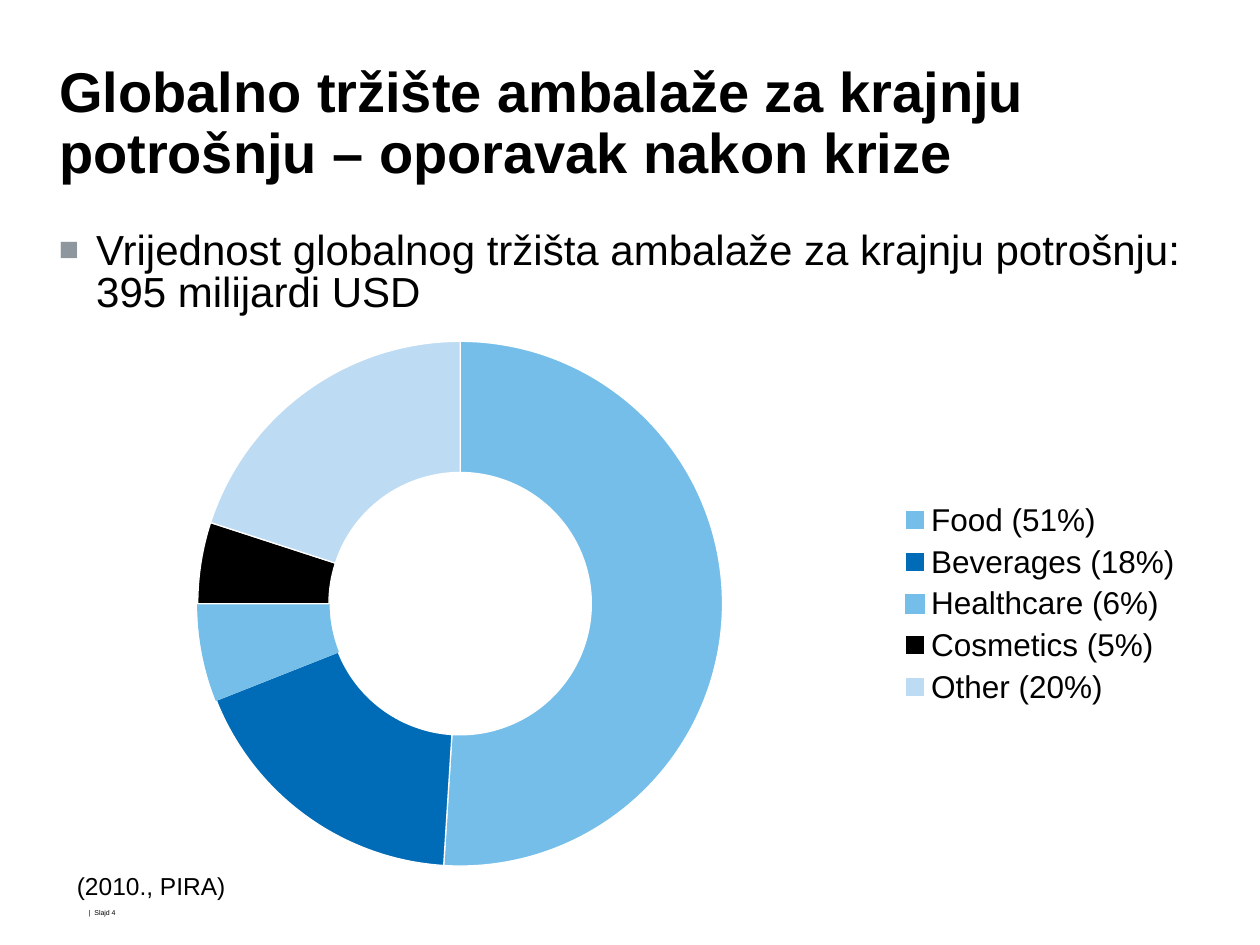
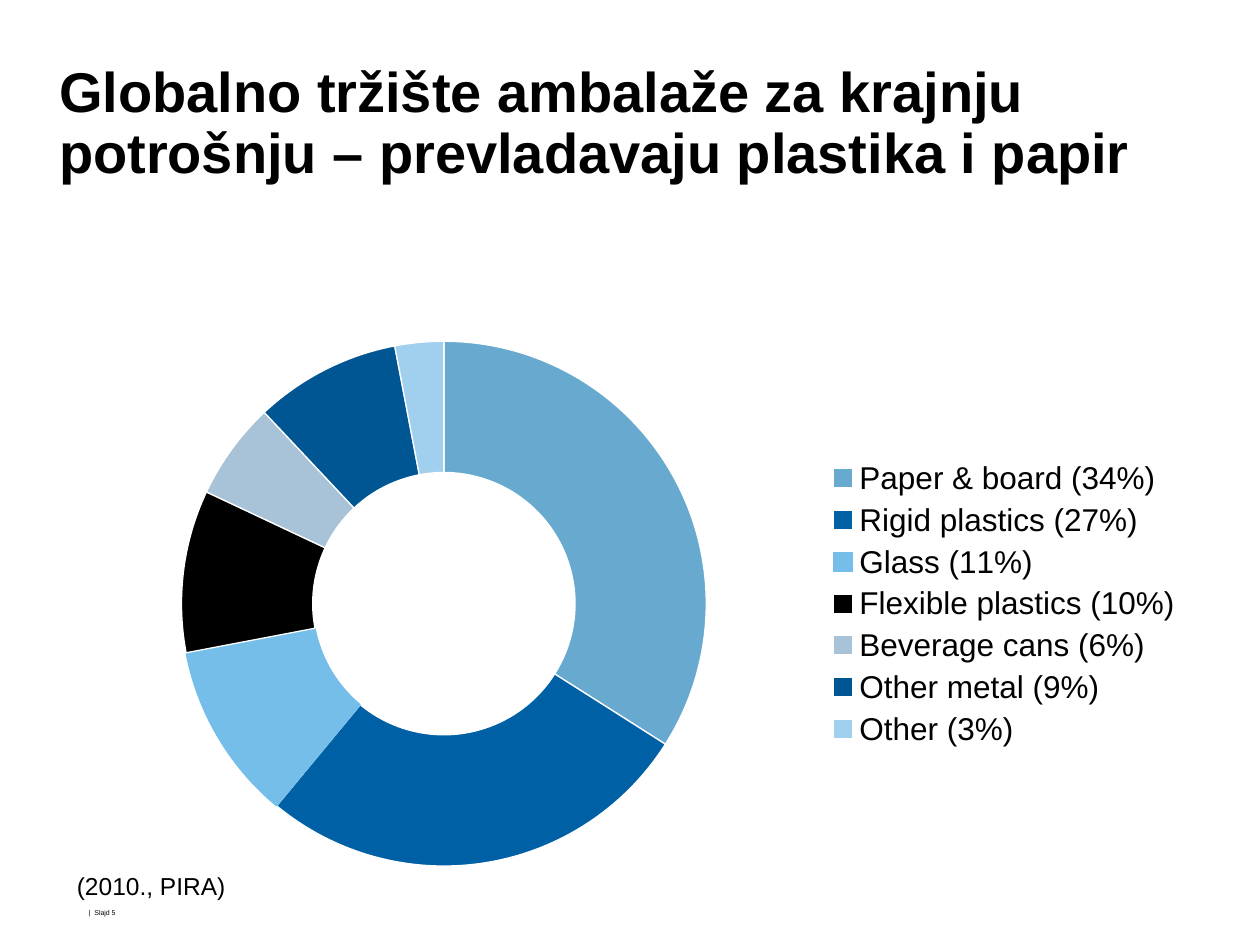
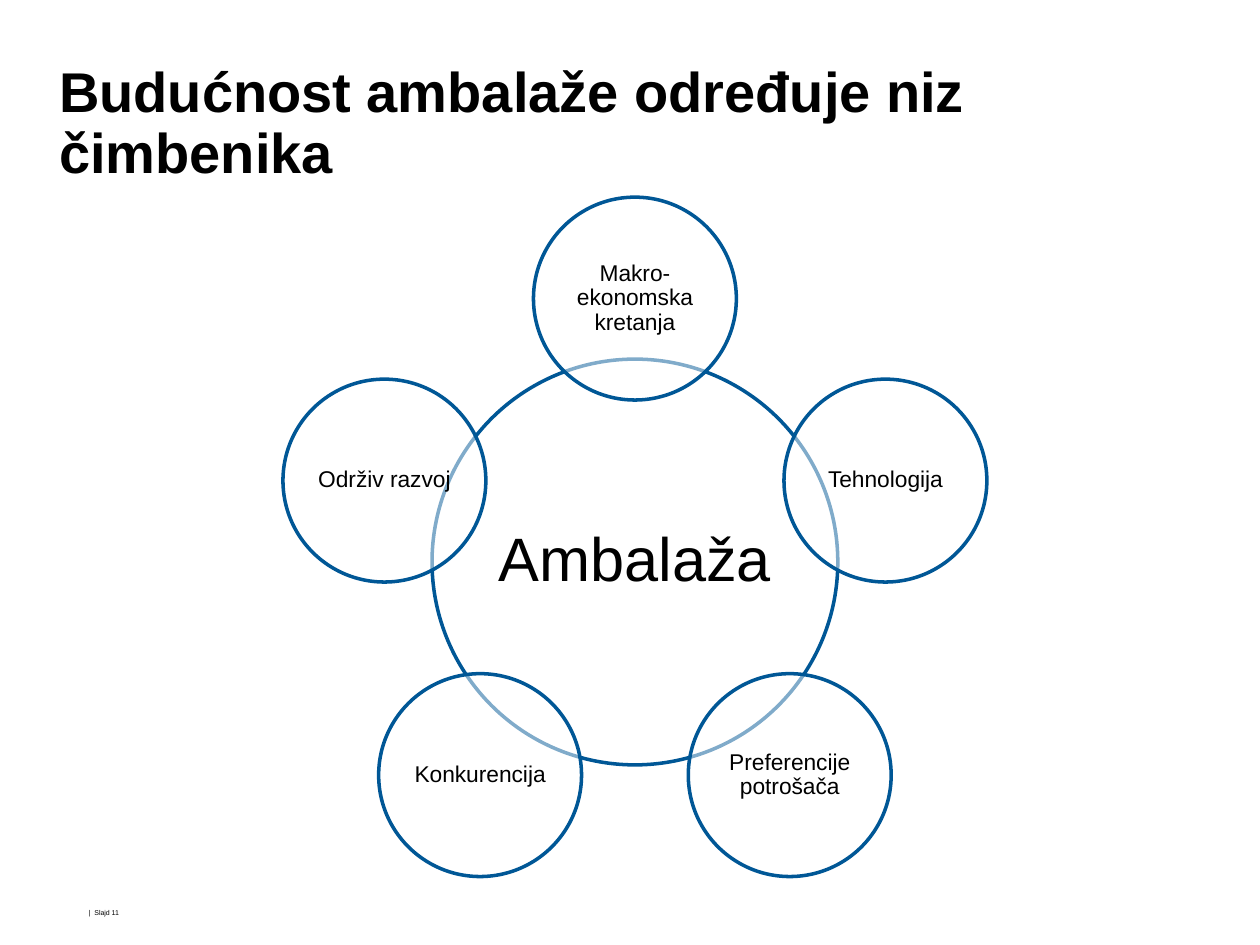
from dataclasses import dataclass
from math import cos, radians, sin

from lxml.etree import SubElement
from pptx import Presentation
from pptx.chart.data import CategoryChartData
from pptx.dml.color import RGBColor
from pptx.enum.chart import XL_CHART_TYPE, XL_LEGEND_POSITION
from pptx.enum.shapes import MSO_SHAPE
from pptx.enum.text import MSO_ANCHOR, MSO_AUTO_SIZE, PP_ALIGN
from pptx.oxml.ns import qn
from pptx.slide import Slide
from pptx.text.text import TextFrame
from pptx.util import Cm, Pt

FONT = "Arial"
COLOURS = {
    "text": "000000",
    "white": "FFFFFF",
    "bullet": "8E979D",
    "ring": "005796",
    "sky": "75BEE9",
    "blue": "006BB6",
    "black": "000000",
    "pale": "BDDBF2",
    "steel": "68A9CF",
    "deep": "0060A5",
    "mist": "A8C2D8",
    "navy": "005593",
    "light": "A1D0EF",
}


@dataclass(frozen=True)
class Share:
    label: str
    percent: int
    colour: str


@dataclass(frozen=True)
class Market:
    title: str
    number: int
    chart_left: float
    shares: list[Share]
    statement: str = ""


MARKETS = [
    Market(
        "Globalno tržište ambalaže za krajnju potrošnju – oporavak nakon krize",
        4,
        0.51,
        [
            Share("Food", 51, "sky"),
            Share("Beverages", 18, "blue"),
            Share("Healthcare", 6, "sky"),
            Share("Cosmetics", 5, "black"),
            Share("Other", 20, "pale"),
        ],
        "Vrijednost globalnog tržišta ambalaže za krajnju potrošnju: "
        "395 milijardi USD",
    ),
    Market(
        "Globalno tržište ambalaže za krajnju potrošnju – prevladavaju plastika i papir",
        5,
        1.3,
        [
            Share("Paper & board", 34, "steel"),
            Share("Rigid plastics", 27, "deep"),
            Share("Glass", 11, "sky"),
            Share("Flexible plastics", 10, "black"),
            Share("Beverage cans", 6, "mist"),
            Share("Other metal", 9, "navy"),
            Share("Other", 3, "light"),
        ],
    ),
]
CHART_RIGHT = 24.1
BORDERLESS_SHARE = 2

FACTORS = [
    "Makro-ekonomska kretanja",
    "Tehnologija",
    "Preferencije potrošača",
    "Konkurencija",
    "Održiv razvoj",
]
HUB_X, HUB_Y, HUB_DIAMETER = 12.8, 11.33, 8.18
FACTOR_DIAMETER, ORBIT = 4.09, 5.31


def rgb(name: str) -> RGBColor:
    return RGBColor.from_string(COLOURS[name])


def write(frame: TextFrame, text: str, *, size: float, bold: bool = False,
          align: PP_ALIGN = PP_ALIGN.LEFT, anchor: MSO_ANCHOR = MSO_ANCHOR.TOP,
          wrap: bool = True, inset: float = 0.1, spacing=None,
          bullet: bool = False) -> None:
    frame.word_wrap = wrap
    frame.auto_size = MSO_AUTO_SIZE.NONE if wrap else MSO_AUTO_SIZE.SHAPE_TO_FIT_TEXT
    frame.vertical_anchor = anchor
    frame.margin_left = frame.margin_right = Cm(inset)
    frame.margin_top = frame.margin_bottom = Cm(inset)
    paragraph = frame.paragraphs[0]
    paragraph.alignment = align
    if spacing is not None:
        paragraph.line_spacing = spacing
    if bullet:
        add_bullet(paragraph)
    run = paragraph.add_run()
    run.text = text
    run.font.name, run.font.size, run.font.bold = FONT, Pt(size), bold
    run.font.color.rgb = rgb("text")


def add_bullet(paragraph) -> None:
    properties = paragraph._p.get_or_add_pPr()
    properties.set("marL", str(Cm(0.75)))
    properties.set("indent", str(-Cm(0.75)))
    colour = SubElement(properties, qn("a:buClr"))
    SubElement(colour, qn("a:srgbClr"), val=COLOURS["bullet"])
    SubElement(properties, qn("a:buSzPct"), val="80000")
    SubElement(properties, qn("a:buFont"), typeface=FONT)
    SubElement(properties, qn("a:buChar"), char="■")


def add_text(slide: Slide, text: str, left: float, top: float,
             width: float, height: float, **text_format) -> None:
    box = slide.shapes.add_textbox(Cm(left), Cm(top), Cm(width), Cm(height))
    write(box.text_frame, text, **text_format)


def add_titled_slide(deck, title: str, number: int, title_width: float = 23.01) -> Slide:
    """Add a slide with the shared title style and slide number line."""
    slide = deck.slides.add_slide(deck.slide_layouts[5])
    heading = slide.shapes.title
    heading.left, heading.top = Cm(1.09), Cm(1.16)
    heading.width, heading.height = Cm(title_width), Cm(2.67)
    write(heading.text_frame, title, size=32, bold=True, spacing=Pt(35))
    add_text(slide, f"|  Slajd {number}", 1.69, 18.19, 0.84, 0.38,
             size=4, anchor=MSO_ANCHOR.BOTTOM, wrap=False)
    return slide


def add_doughnut(slide: Slide, market: Market) -> None:
    data = CategoryChartData()
    data.categories = [f"{share.label} ({share.percent}%)" for share in market.shares]
    data.add_series("Series 1", [share.percent for share in market.shares])
    chart = slide.shapes.add_chart(
        XL_CHART_TYPE.DOUGHNUT, Cm(market.chart_left), Cm(6.53),
        Cm(CHART_RIGHT - market.chart_left), Cm(11.28), data).chart
    chart.has_title = False
    chart.font.name, chart.font.size = FONT, Pt(18)
    chart.font.color.rgb = rgb("text")
    chart.has_legend = True
    chart.legend.position = XL_LEGEND_POSITION.RIGHT
    chart.legend.include_in_layout = False
    plot = chart.plots[0]
    plot.vary_by_categories = True
    plot.has_data_labels = False
    for index, share in enumerate(market.shares):
        slice_format = plot.series[0].points[index].format
        slice_format.fill.solid()
        slice_format.fill.fore_color.rgb = rgb(share.colour)
        border = share.colour if index == BORDERLESS_SHARE else "white"
        slice_format.line.color.rgb = rgb(border)
        slice_format.line.width = Pt(0.75)


def add_market_slide(deck, market: Market) -> None:
    slide = add_titled_slide(deck, market.title, market.number)
    if market.statement:
        add_text(slide, market.statement, 1.09, 4.57, 23.01, 1.96,
                 size=24, spacing=Pt(24), bullet=True)
    add_doughnut(slide, market)
    add_text(slide, "(2010., PIRA)", 1.3, 17.3, 3.6, 0.86, size=14, inset=0.25)


def add_ring(slide: Slide, text: str, center_x: float, center_y: float,
             diameter: float, size: float, inset: float) -> None:
    ring = slide.shapes.add_shape(
        MSO_SHAPE.OVAL, Cm(center_x - diameter / 2), Cm(center_y - diameter / 2),
        Cm(diameter), Cm(diameter))
    ring.shadow.inherit = False
    ring.fill.solid()
    ring.fill.fore_color.rgb = rgb("white")
    fill_colour = ring.fill._xPr.find(qn("a:solidFill"))[0]
    SubElement(fill_colour, qn("a:alpha"), val="50000")
    ring.line.color.rgb = rgb("ring")
    ring.line.width = Pt(2)
    write(ring.text_frame, text, size=size, inset=inset, spacing=0.9,
          align=PP_ALIGN.CENTER, anchor=MSO_ANCHOR.MIDDLE)


def add_factors_slide(deck) -> None:
    slide = add_titled_slide(deck, "Budućnost ambalaže određuje niz čimbenika", 11, 23.8)
    add_ring(slide, "Ambalaža", HUB_X, HUB_Y, HUB_DIAMETER, 35, 0.13)
    for index, factor in enumerate(FACTORS):
        angle = radians(index * 360 / len(FACTORS) - 90)
        add_ring(slide, factor, HUB_X + ORBIT * cos(angle), HUB_Y + ORBIT * sin(angle),
                 FACTOR_DIAMETER, 13, 0.05)


def main() -> None:
    deck = Presentation()
    deck.slide_width, deck.slide_height = Cm(25.4), Cm(19.05)
    for market in MARKETS:
        add_market_slide(deck, market)
    add_factors_slide(deck)
    deck.save("out.pptx")


if __name__ == "__main__":
    main()
